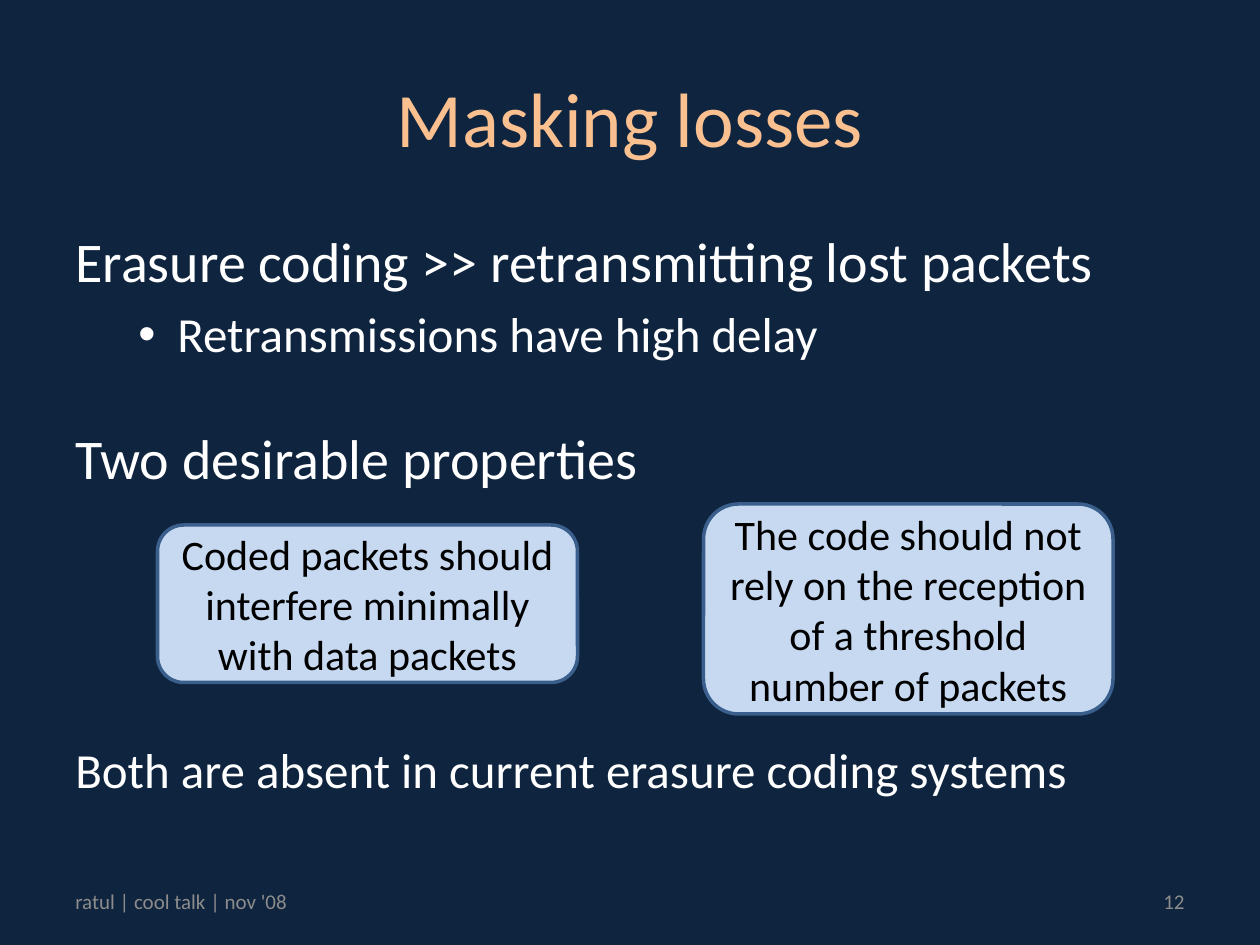
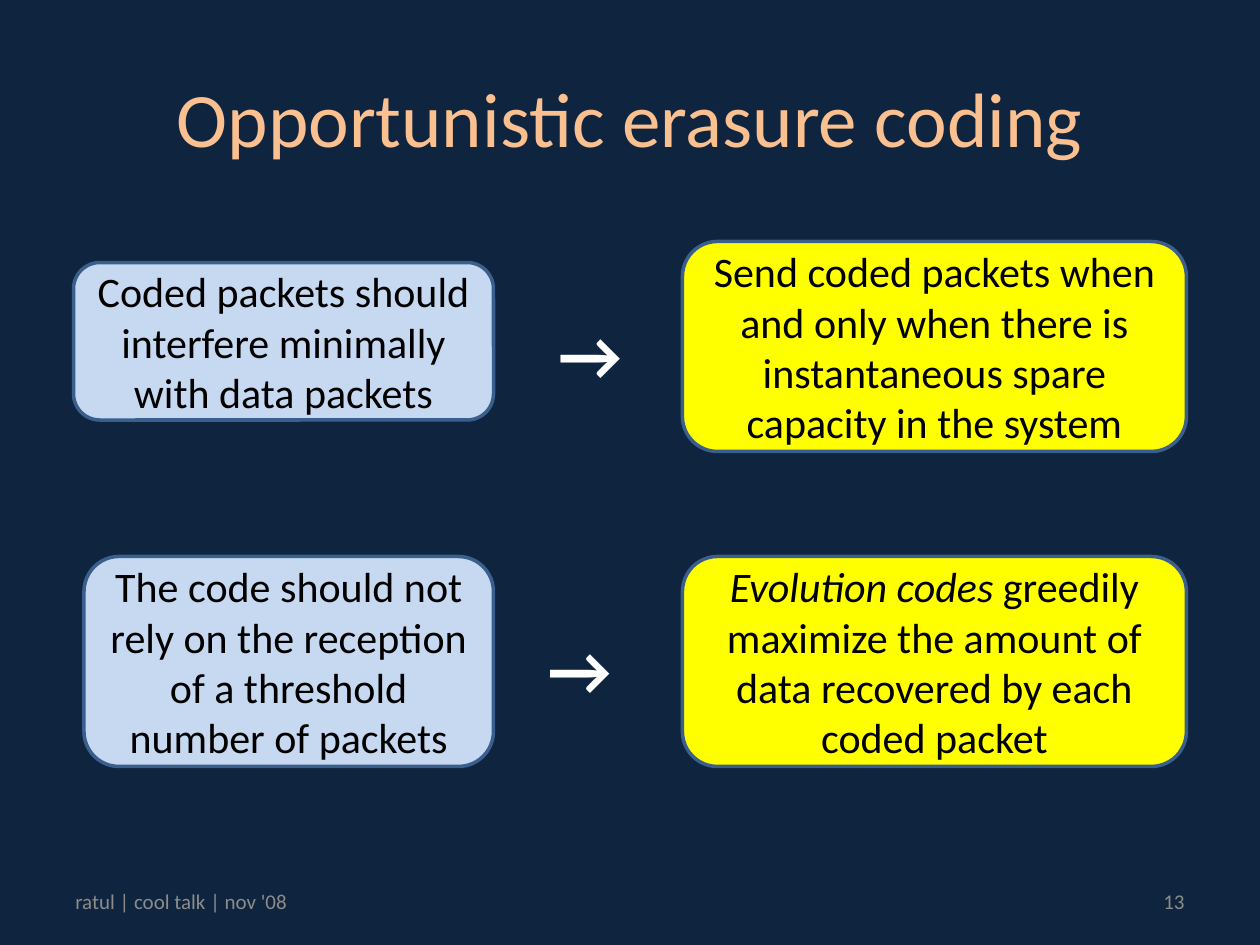
from dataclasses import dataclass

from lxml.etree import SubElement
from pptx import Presentation
from pptx.dml.color import RGBColor
from pptx.enum.shapes import MSO_SHAPE
from pptx.enum.text import MSO_ANCHOR, PP_ALIGN
from pptx.oxml.ns import qn
from pptx.util import Inches, Pt


@dataclass(frozen=True)
class Theme:
    font: str = "Calibri"
    background: str = "0F243E"
    title: str = "FAC090"
    body: str = "FFFFFF"
    footer: str = "8C8C8C"
    box_text: str = "000000"
    box_line: str = "3A5F8C"
    goal: str = "C6D9F1"
    solution: str = "FFFF00"
    title_size: int = 44
    arrow_size: int = 40
    point_size: int = 32
    detail_size: int = 28
    box_size: int = 24
    footer_size: int = 12


theme = Theme()

prs = Presentation()
prs.slide_width, prs.slide_height = Inches(10), Inches(7.5)

# Grid: 12 columns by 18 rows
column = prs.slide_width / 12
row = prs.slide_height / 18
margin, content_width = 0.6, 10.8
footer_width = 2.8


def add_text(paragraph, text, size, color, bold=False, italic=False):
    run = paragraph.add_run()
    run.text = text
    run.font.name = theme.font
    run.font.size = Pt(size)
    run.font.bold = bold
    run.font.italic = italic
    run.font.color.rgb = RGBColor.from_string(color)


def add_block(slide, left, top, width, height, fill=None,
              align=PP_ALIGN.LEFT, anchor=MSO_ANCHOR.MIDDLE):
    """Place a text area, or a rounded box if a fill is given; return its text frame."""
    area = [round(v) for v in (left * column, top * row, width * column, height * row)]
    if fill:
        block = slide.shapes.add_shape(MSO_SHAPE.ROUNDED_RECTANGLE, *area)
        block.shadow.inherit = False
        block.fill.solid()
        block.fill.fore_color.rgb = RGBColor.from_string(fill)
        block.line.color.rgb = RGBColor.from_string(theme.box_line)
        block.line.width = Pt(2)
    else:
        block = slide.shapes.add_textbox(*area)
    frame = block.text_frame
    frame.word_wrap = True
    frame.vertical_anchor = anchor
    frame.paragraphs[0].alignment = align
    return frame


# Shared background, titles and footers
master_fill = prs.slide_master.background.fill
master_fill.solid()
master_fill.fore_color.rgb = RGBColor.from_string(theme.background)

slides = []
for number, title in enumerate(["Masking losses", "Opportunistic erasure coding"], 12):
    slide = prs.slides.add_slide(prs.slide_layouts[6])
    slides.append(slide)
    heading = add_block(slide, margin, 0.72, content_width, 3, align=PP_ALIGN.CENTER)
    add_text(heading.paragraphs[0], title, theme.title_size, theme.title)
    for left, text, align in [
        (margin, "ratul | cool talk | nov '08", PP_ALIGN.LEFT),
        (12 - margin - footer_width, str(number), PP_ALIGN.RIGHT),
    ]:
        footer = add_block(slide, left, 16.68, footer_width, 0.96, align=align)
        add_text(footer.paragraphs[0], text, theme.footer_size, theme.footer)
masking, opportunistic = slides

# Masking losses: points, with room for the boxes before the conclusion
points = add_block(masking, margin, 4.2, content_width, 12.4, anchor=MSO_ANCHOR.TOP)
for index, (text, size, space_before, bulleted) in enumerate([
    ("Erasure coding >> retransmitting lost packets", theme.point_size, 0, False),
    ("Retransmissions have high delay", theme.detail_size, 5.6, True),
    ("Two desirable properties", theme.point_size, 34.8, False),
    ("Both are absent in current erasure coding systems", theme.detail_size, 142, False),
]):
    point = points.add_paragraph() if index else points.paragraphs[0]
    point.space_before = Pt(space_before)
    if bulleted:
        properties = point._p.get_or_add_pPr()
        properties.set("marL", str(Inches(0.81)))
        properties.set("indent", str(Inches(-0.31)))
        SubElement(properties, qn("a:buFont")).set("typeface", "Arial")
        SubElement(properties, qn("a:buChar")).set("char", "•")
    add_text(point, text, size, theme.body)

# Boxes on both slides: goals in blue, solutions in yellow
interference_goal = [("Coded packets should interfere minimally with data packets", False)]
threshold_goal = [
    ("The code should not rely on the reception of a threshold number of packets", False)]
spare_capacity = [
    ("Send coded packets when and only when there is instantaneous spare capacity in the system",
     False)]
evolution_codes = [
    ("Evolution codes", True),
    (" greedily maximize the amount of data recovered by each coded packet", False)]

for slide, left, top, width, height, fill, wording in [
    (masking, 1.5, 10, 4, 3, theme.goal, interference_goal),
    (masking, 6.7, 9.6, 3.9, 4, theme.goal, threshold_goal),
    (opportunistic, 0.7, 5, 4, 3, theme.goal, interference_goal),
    (opportunistic, 0.8, 10.6, 3.9, 4, theme.goal, threshold_goal),
    (opportunistic, 6.5, 4.6, 4.8, 4, theme.solution, spare_capacity),
    (opportunistic, 6.5, 10.6, 4.8, 4, theme.solution, evolution_codes),
]:
    box = add_block(slide, left, top, width, height, fill, PP_ALIGN.CENTER)
    for text, italic in wording:
        add_text(box.paragraphs[0], text, theme.box_size, theme.box_text, italic=italic)

# Arrows from each goal to its solution
for left, top in [(5.2, 5.8), (5.1, 11.8)]:
    arrow = add_block(opportunistic, left, top, 0.8, 1.85, anchor=MSO_ANCHOR.TOP)
    add_text(arrow.paragraphs[0], "→", theme.arrow_size, theme.body, bold=True)

prs.save("out.pptx")
